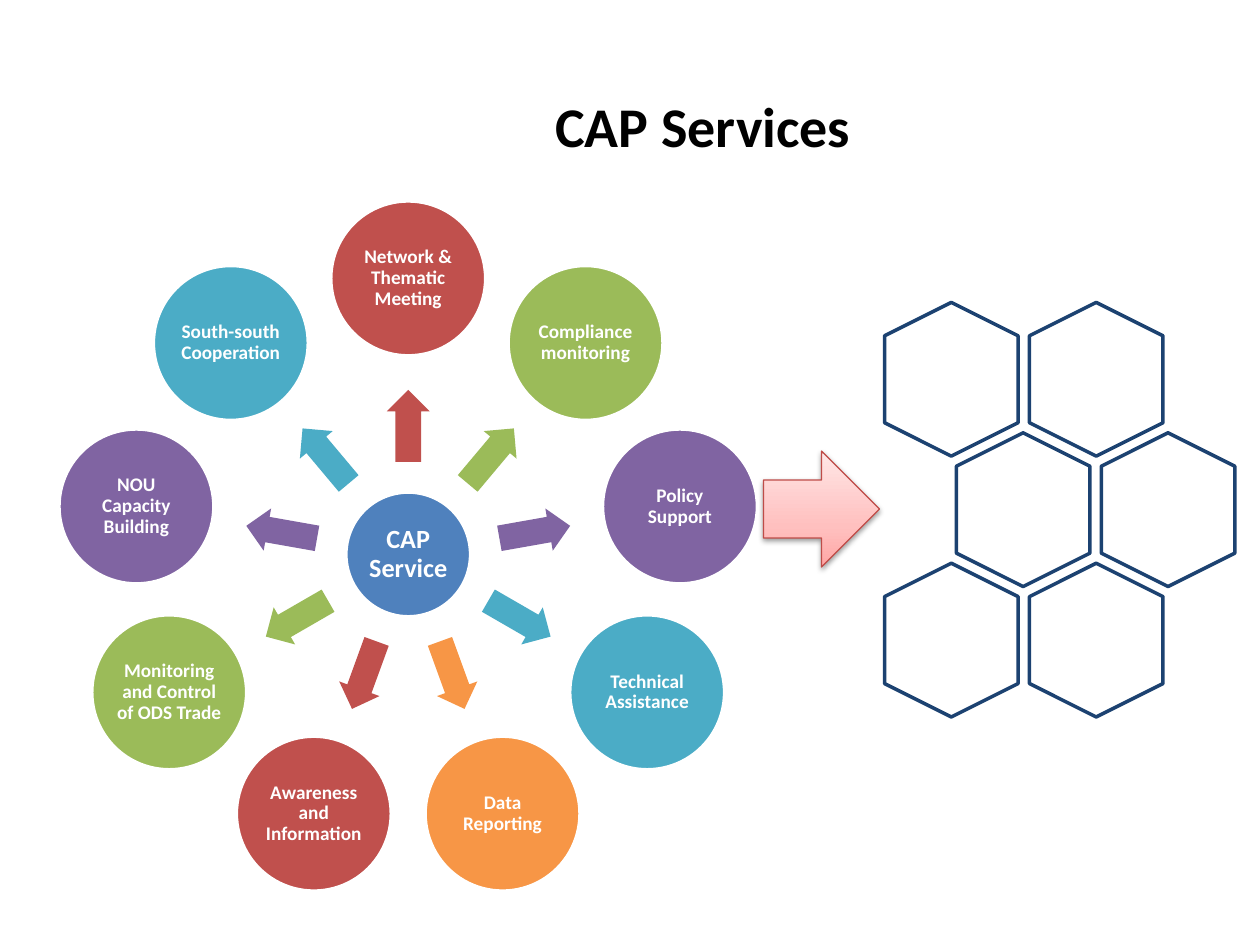
"""Build the CAP Services slide: a radial diagram leading to a honeycomb."""
from copy import deepcopy
from math import cos, radians, sin

from lxml import etree
from pptx import Presentation
from pptx.dml.color import RGBColor
from pptx.enum.shapes import MSO_SHAPE
from pptx.enum.text import MSO_ANCHOR, PP_ALIGN
from pptx.util import Inches, Pt

OVAL, ARROW, HEXAGON = MSO_SHAPE.OVAL, MSO_SHAPE.RIGHT_ARROW, MSO_SHAPE.HEXAGON
CENTER, MIDDLE = PP_ALIGN.CENTER, MSO_ANCHOR.MIDDLE
A = "http://schemas.openxmlformats.org/drawingml/2006/main"
SHADOW = (f'<a:effectLst xmlns:a="{A}"><a:outerShdw blurRad="40000" dist="20000" '
          'dir="5400000" rotWithShape="0"><a:srgbClr val="000000">'
          '<a:alpha val="38000"/></a:srgbClr></a:outerShdw></a:effectLst>')


def rgb(color):
    return RGBColor.from_string(color)


def add_shape(kind, cx, cy, w, h, fill, line=None, width=2, text="", size=11):
    shape = s.shapes.add_shape(kind, Inches(cx - w / 2), Inches(cy - h / 2), Inches(w), Inches(h))
    shape.shadow.inherit = False
    shape.fill.solid()
    shape.fill.fore_color.rgb = rgb(fill)
    if line:
        shape.line.color.rgb = rgb(line)
        shape.line.width = Pt(width)
    else:
        shape.line.fill.background()
    if text:
        tf = shape.text_frame
        tf.word_wrap = True
        tf.vertical_anchor = MIDDLE
        tf.margin_left = tf.margin_right = tf.margin_top = tf.margin_bottom = Inches(0.02)
        p = tf.paragraphs[0]
        p.text = text
        p.alignment = CENTER
        p.line_spacing = 0.9
        p.font.name, p.font.size, p.font.bold = "Calibri", Pt(size), True
        p.font.color.rgb = rgb("FFFFFF")
    return shape


prs = Presentation()
prs.slide_width, prs.slide_height = Inches(10), Inches(7.5)
s = prs.slides.add_slide(prs.slide_layouts[5])

title = s.shapes.title
title.left, title.top, title.width, title.height = Inches(1.31), Inches(0.58), Inches(8.54), Inches(0.82)
title.text_frame.vertical_anchor = MIDDLE
p = title.text_frame.paragraphs[0]
p.text = "CAP Services"
p.alignment = CENTER
p.font.name, p.font.size, p.font.bold = "Calibri", Pt(32), True
p.font.color.rgb = rgb("000000")

for row, indent in enumerate((0, 0.57, 0)):
    for col in range(2):
        cell = add_shape(HEXAGON, 7.55 + indent + 1.15 * col, 3.01 + 1.035 * row,
                         1.22, 1.06, "FFFFFF", "1C4271")
        cell.rotation = 90

big_arrow = add_shape(ARROW, 6.52, 4.04, 0.92, 0.92, "FFC0BF", "BF4C48", 0.75)
big_arrow.fill.gradient()
big_arrow.fill.gradient_angle = 90
stops = big_arrow._element.spPr.find(f".//{{{A}}}gsLst")
stops.insert(1, deepcopy(stops[0]))
for stop, (position, color) in zip(big_arrow.fill.gradient_stops,
                                   ((0, "FFA6A5"), (0.35, "FFC0BF"), (1, "FFE7E7"))):
    stop.position = position
    stop.color.rgb = rgb(color)
effects = big_arrow._element.spPr.find(f"{{{A}}}effectLst")
effects.getparent().replace(effects, etree.fromstring(SHADOW))

services = [
    ("Network & Thematic Meeting", "C0504D"),
    ("Compliance monitoring", "9BBB59"),
    ("Policy Support", "8064A2"),
    ("Technical Assistance", "4BACC6"),
    ("Data Reporting", "F79646"),
    ("Awareness and Information", "C0504D"),
    ("Monitoring and Control of ODS Trade", "9BBB59"),
    ("NOU Capacity Building", "8064A2"),
    ("South-south Cooperation", "4BACC6"),
]
hub_x, hub_y = 3.24, 4.4
add_shape(OVAL, hub_x, hub_y, 0.99, 0.99, "4F81BD", "FFFFFF", text="CAP Service", size=15)
for i, (name, color) in enumerate(services):
    angle = 270 + i * 360 / len(services)
    dx, dy = cos(radians(angle)), sin(radians(angle))
    arrow = add_shape(ARROW, hub_x + 1.02 * dx, hub_y + 1.02 * dy, 0.57, 0.34, color)
    arrow.adjustments[0] = 0.6
    arrow.rotation = angle % 360
    add_shape(OVAL, hub_x + 2.19 * dx, hub_y + 2.19 * dy, 1.23, 1.23, color, "FFFFFF", text=name)

prs.save("out.pptx")
